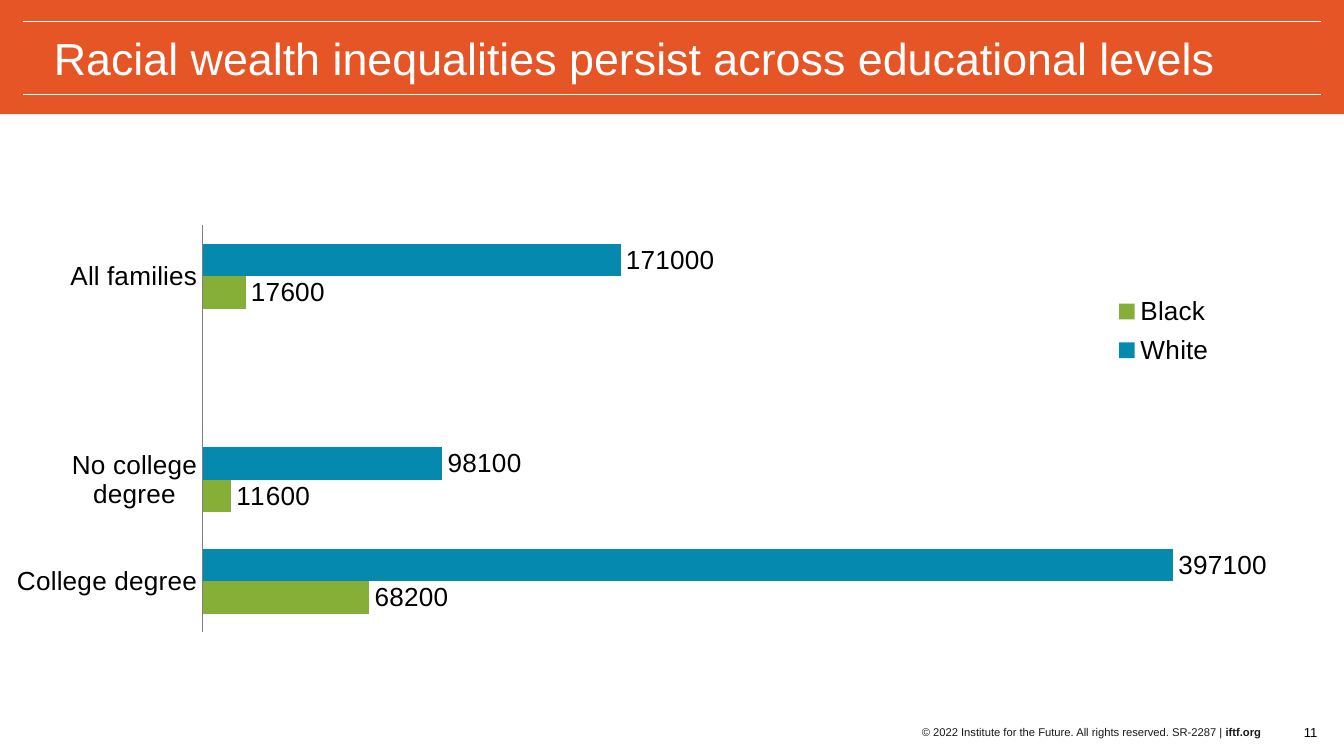
from lxml import etree
from pptx import Presentation
from pptx.chart.data import CategoryChartData
from pptx.dml.color import RGBColor
from pptx.enum.chart import XL_CHART_TYPE, XL_LABEL_POSITION, XL_LEGEND_POSITION, XL_TICK_MARK
from pptx.enum.shapes import MSO_CONNECTOR, MSO_SHAPE
from pptx.enum.text import MSO_ANCHOR, PP_ALIGN
from pptx.oxml import parse_xml
from pptx.oxml.ns import nsdecls, qn
from pptx.util import Inches, Pt

BAR_CLUSTERED = XL_CHART_TYPE.BAR_CLUSTERED
OUTSIDE_END = XL_LABEL_POSITION.OUTSIDE_END
LEGEND_BOTTOM = XL_LEGEND_POSITION.BOTTOM
NO_TICK = XL_TICK_MARK.NONE
STRAIGHT = MSO_CONNECTOR.STRAIGHT
RECTANGLE = MSO_SHAPE.RECTANGLE
MIDDLE = MSO_ANCHOR.MIDDLE
LEFT, RIGHT = PP_ALIGN.LEFT, PP_ALIGN.RIGHT

FONT = "Arial"
TITLE_ONLY = 5
COLORS = {
    "banner": "E65526",
    "white": "FFFFFF",
    "black": "000000",
    "footer": "1A1918",
    "axis": "808080",
    "White": "0589AF",
    "Black": "85AF36",
}
CATEGORIES = ["All families", "", "No college degree", "College degree"]
WEALTH = {
    "White": [171000, None, 98100, 397100],
    "Black": [17600, None, 11600, 68200],
}


def color(name):
    return RGBColor.from_string(COLORS[name])


def set_font(font, size, color_name, bold=False):
    font.name = FONT
    font.size = Pt(size)
    font.bold = bold
    font.color.rgb = color(color_name)


def set_layout(element, box, inner=False):
    """Place a chart part by shares of the chart's width and height."""
    for old in element.findall(qn("c:layout")):
        element.remove(old)
    target = '<c:layoutTarget val="inner"/>' if inner else ""
    modes = '<c:xMode val="edge"/><c:yMode val="edge"/>'
    sizes = "".join(f'<c:{key} val="{share}"/>' for key, share in zip("xywh", box))
    layout = parse_xml(
        f'<c:layout {nsdecls("c")}><c:manualLayout>{target}{modes}{sizes}'
        "</c:manualLayout></c:layout>"
    )
    element.insert(0 if inner else 1, layout)


class SlideBuilder:
    """Boxes are left, top, width and height in percent of the slide's size."""

    def __init__(self, presentation):
        self.width = presentation.slide_width
        self.height = presentation.slide_height
        self.slide = presentation.slides.add_slide(presentation.slide_layouts[TITLE_ONLY])
        self.shapes = self.slide.shapes

    def place(self, box):
        left, top, width, height = box
        return (
            round(self.width * left / 100),
            round(self.height * top / 100),
            round(self.width * width / 100),
            round(self.height * height / 100),
        )

    def banner(self, box):
        shape = self.shapes.add_shape(RECTANGLE, *self.place(box))
        shape.shadow.inherit = False
        shape.fill.solid()
        shape.fill.fore_color.rgb = color("banner")
        shape.line.fill.background()

    def rule(self, left, right, top):
        start, y, end, _ = self.place((left, top, right, 0))
        line = self.shapes.add_connector(STRAIGHT, start, y, end, y)
        line.line.color.rgb = color("white")
        line.line.width = Pt(0.5)
        etree.SubElement(line._element.spPr, qn("a:effectLst"))

    def fill_text(self, shape, runs, size, color_name, align):
        """Fill a shape with one paragraph of (text, bold) runs."""
        frame = shape.text_frame
        frame.word_wrap = True
        frame.vertical_anchor = MIDDLE
        paragraph = frame.paragraphs[0]
        paragraph.alignment = align
        for text, bold in runs:
            run = paragraph.add_run()
            run.text = text
            set_font(run.font, size, color_name, bold)

    def title(self, box, text):
        title = self.shapes.title
        title.left, title.top, title.width, title.height = self.place(box)
        self.shapes._spTree.append(title._element)  # in front of the banner
        self.fill_text(title, [(text, False)], 24, "white", LEFT)

    def text(self, box, runs, size, color_name):
        shape = self.shapes.add_textbox(*self.place(box))
        self.fill_text(shape, runs, size, color_name, RIGHT)

    def bar_chart(self, box, categories, series_values):
        data = CategoryChartData(number_format="General")
        data.categories = categories
        for name, values in series_values.items():
            data.add_series(name, values)
        chart = self.shapes.add_chart(BAR_CLUSTERED, *self.place(box), data).chart
        chart.has_title = False
        set_font(chart.font, 14, "black")

        plot = chart.plots[0]
        plot.gap_width = 112
        plot.vary_by_categories = False
        for series in plot.series:
            series.format.fill.solid()
            series.format.fill.fore_color.rgb = color(series.name)
            labels = series.data_labels
            labels.show_value = True
            labels.position = OUTSIDE_END
            set_font(labels.font, 14, "black")

        axis = chart.category_axis
        axis.reverse_order = True
        axis.major_tick_mark = NO_TICK
        axis.format.line.color.rgb = color("axis")
        axis.format.line.width = Pt(0.75)
        set_font(axis.tick_labels.font, 14, "black")

        value_axis = chart.value_axis
        value_axis.minimum_scale = 0
        value_axis.maximum_scale = 450000
        value_axis.has_major_gridlines = False
        value_axis.visible = False

        chart.has_legend = True
        legend = chart.legend
        legend.position = LEGEND_BOTTOM
        legend.include_in_layout = False
        set_font(legend.font, 14, "black")
        set_layout(legend._element, (0.84, 0.28, 0.1, 0.16))
        set_layout(chart._chartSpace.chart.plotArea, (0.155, 0.165, 0.841, 0.752), inner=True)


def main():
    presentation = Presentation()
    presentation.slide_width = Inches(10)
    presentation.slide_height = Inches(5.625)

    builder = SlideBuilder(presentation)
    builder.banner((0, 0, 100, 15.1))
    for top in (2.8, 12.5):
        builder.rule(1.7, 98.3, top)
    builder.title((3, 2.8, 97, 9.7), "Racial wealth inequalities persist across educational levels")
    builder.bar_chart((0, 18, 97.3, 71.6), CATEGORIES, WEALTH)
    copyright_runs = [
        ("© 2022 Institute for the Future. All rights reserved. SR-2287 | ", False),
        ("iftf.org", True),
    ]
    builder.text((66.9, 95.1, 27.9, 3.6), copyright_runs, 6, "footer")
    builder.text((95.1, 95.1, 3.9, 3.6), [("11", False)], 7, "black")

    presentation.save("out.pptx")


if __name__ == "__main__":
    main()
